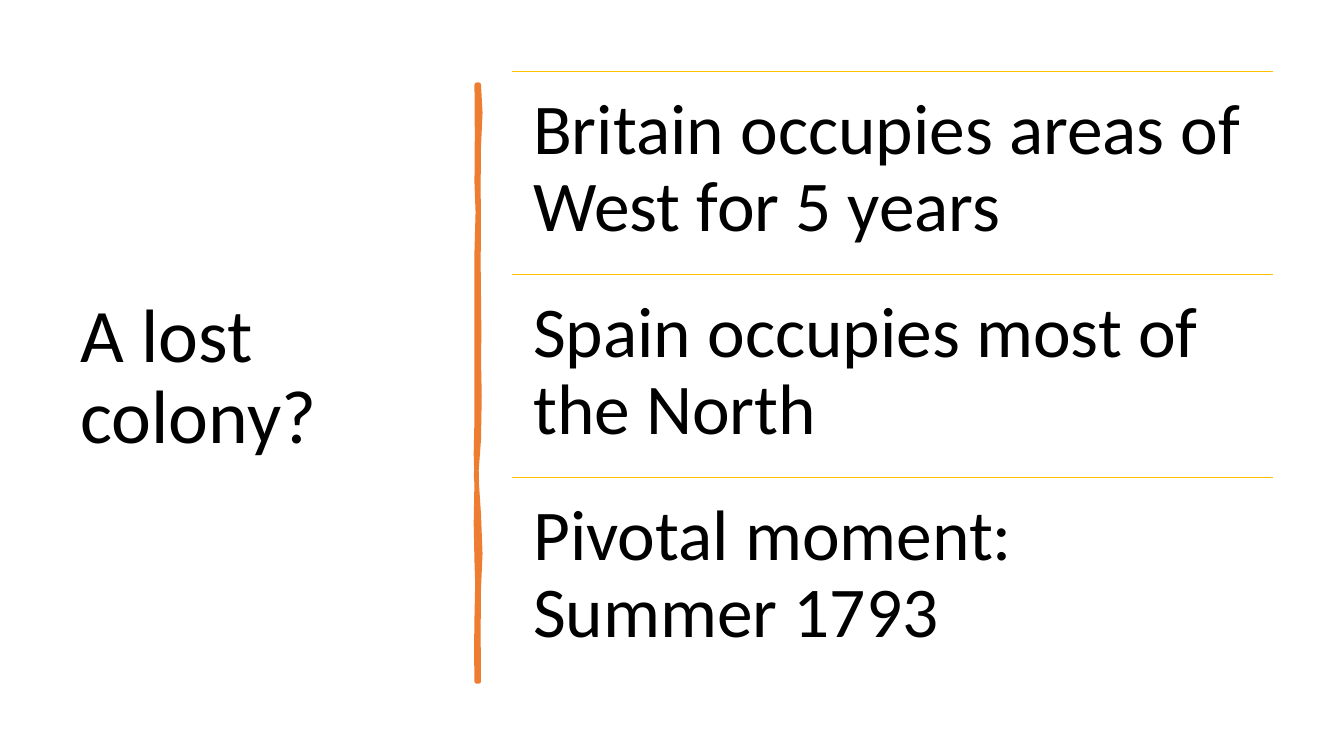
from lxml import etree
from pptx import Presentation
from pptx.dml.color import RGBColor
from pptx.enum import shapes, text
from pptx.oxml.ns import qn
from pptx.util import Inches, Pt

TITLE = "A lost colony?"
EVENTS = [
    "Britain occupies areas of West for 5 years",
    "Spain occupies most of the North",
    "Pivotal moment: Summer 1793",
]
COLOURS = {"ink": "000000", "rule": "FFC000", "stroke": "ED7D31"}
FONT = "Calibri"
STROKE_START = (4.75, 0.84)
STROKE_CURVES = [
    (4.77, 1.02, 4.77, 1.19, 4.75, 1.46), (4.73, 1.73, 4.76, 1.95, 4.75, 2.26),
    (4.74, 2.57, 4.75, 2.62, 4.75, 2.94), (4.74, 3.25, 4.77, 3.42, 4.75, 3.56),
    (4.73, 3.7, 4.79, 4.14, 4.75, 4.36), (4.71, 4.57, 4.72, 4.84, 4.75, 5.1),
    (4.77, 5.36, 4.77, 5.64, 4.75, 5.84), (4.73, 6.03, 4.76, 6.5, 4.75, 6.76),
    (4.74, 6.76, 4.73, 6.76, 4.73, 6.76), (4.74, 6.46, 4.71, 6.44, 4.73, 6.13),
    (4.74, 5.83, 4.74, 5.7, 4.73, 5.57), (4.72, 5.44, 4.72, 4.95, 4.73, 4.77),
    (4.73, 4.59, 4.71, 4.45, 4.73, 4.15), (4.74, 3.86, 4.72, 3.73, 4.73, 3.35),
    (4.74, 2.98, 4.72, 2.81, 4.73, 2.5), (4.74, 2.18, 4.75, 2, 4.73, 1.81),
    (4.7, 1.63, 4.77, 1.04, 4.73, 0.84),
]
CURVE_STEPS = 2
LIST_LEFT, LIST_TOP, LIST_WIDTH, LIST_BOTTOM = 5.08, 0.71, 7.55, 6.75


def colour(name):
    return RGBColor.from_string(COLOURS[name])


def add_text(slide, words, left, top, width, height, size,
             inset=0.1, inset_y=0.05, anchor=text.MSO_ANCHOR.TOP):
    frame = slide.shapes.add_textbox(
        Inches(left), Inches(top), Inches(width), Inches(height)).text_frame
    frame.word_wrap = True
    frame.vertical_anchor = anchor
    frame.margin_left = frame.margin_right = Inches(inset)
    frame.margin_top = frame.margin_bottom = Inches(inset_y)
    paragraph = frame.paragraphs[0]
    paragraph.text = words
    paragraph.line_spacing = 0.9
    paragraph.font.name = FONT
    paragraph.font.size = Pt(size)
    paragraph.font.color.rgb = colour("ink")


def add_rule(slide, left, top, width):
    rule = slide.shapes.add_connector(
        shapes.MSO_CONNECTOR.STRAIGHT,
        Inches(left), Inches(top), Inches(left + width), Inches(top))
    rule.line.color.rgb = colour("rule")
    rule.line.width = Pt(1)
    etree.SubElement(rule._element.spPr, qn("a:effectLst"))


def curve_points(start, curves):
    points = []
    for x1, y1, x2, y2, x3, y3 in curves:
        for step in range(1, CURVE_STEPS + 1):
            t = step / CURVE_STEPS
            weights = ((1 - t) ** 3, 3 * t * (1 - t) ** 2, 3 * t * t * (1 - t), t ** 3)
            points.append(tuple(
                Inches(sum(w * v for w, v in zip(weights, values)))
                for values in ((start[0], x1, x2, x3), (start[1], y1, y2, y3))))
        start = (x3, y3)
    return points


def add_brush_stroke(slide):
    builder = slide.shapes.build_freeform(*(Inches(v) for v in STROKE_START))
    builder.add_line_segments(curve_points(STROKE_START, STROKE_CURVES), close=True)
    stroke = builder.convert_to_shape()
    stroke.shadow.inherit = False
    stroke.fill.solid()
    stroke.fill.fore_color.rgb = colour("stroke")
    stroke.line.color.rgb = colour("stroke")
    stroke.line.width = Pt(3.25)


def main():
    """Build the slide with a title beside a ruled list of events."""
    deck = Presentation()
    deck.slide_width, deck.slide_height = Inches(40 / 3), Inches(7.5)
    slide = deck.slides.add_slide(deck.slide_layouts[6])
    add_text(slide, TITLE, 0.7, 0.7, 3.74, 6.11, 54, anchor=text.MSO_ANCHOR.MIDDLE)
    add_brush_stroke(slide)
    row_height = (LIST_BOTTOM - LIST_TOP) / len(EVENTS)
    for row, event in enumerate(EVENTS):
        top = LIST_TOP + row * row_height
        add_rule(slide, LIST_LEFT, top, LIST_WIDTH)
        add_text(slide, event, LIST_LEFT, top, LIST_WIDTH, row_height, 51,
                 inset=0.21, inset_y=0.21)
    deck.save("out.pptx")


if __name__ == "__main__":
    main()
